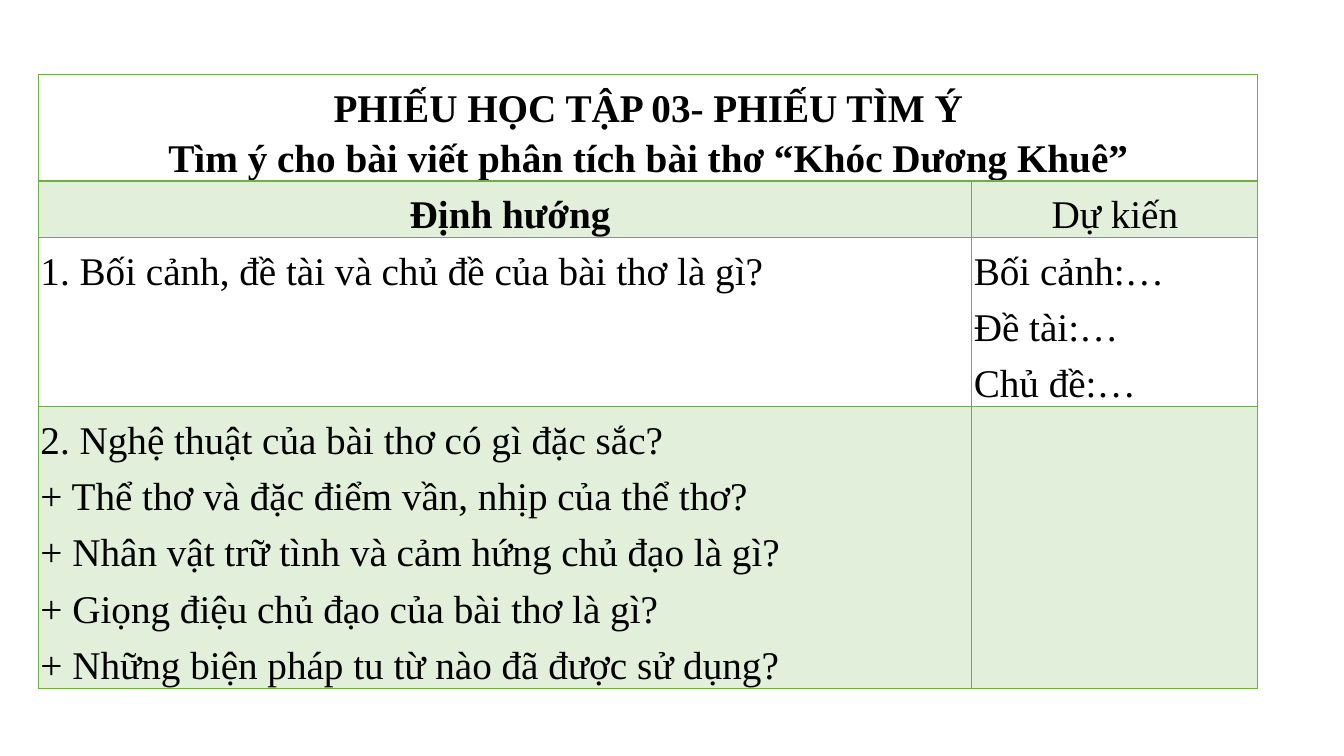
import pptx
import pptx.dml.color
import pptx.enum.text
import pptx.oxml
import pptx.oxml.ns
import pptx.util

Cm = pptx.util.Cm
Pt = pptx.util.Pt
ALIGN = pptx.enum.text.PP_ALIGN

TITLE = [
    "PHIẾU HỌC TẬP 03- PHIẾU TÌM Ý",
    "Tìm ý cho bài viết phân tích bài thơ “Khóc Dương Khuê”",
]
HEADINGS = [" Định hướng", "Dự kiến"]
CONTEXT_QUESTION = ["1. Bối cảnh, đề tài và chủ đề của bài thơ là gì?"]
CONTEXT_ANSWERS = ["Bối cảnh:…", "Đề tài:…", "Chủ đề:…"]
ART_QUESTIONS = [
    "2. Nghệ thuật của bài thơ có gì đặc sắc?",
    "+ Thể thơ và đặc điểm vần, nhịp của thể thơ?",
    "+ Nhân vật trữ tình và cảm hứng chủ đạo là gì?",
    "+ Giọng điệu chủ đạo của bài thơ là gì?",
    "+ Những biện pháp tu từ nào đã được sử dụng?",
]
ROWS = [
    [TITLE, []],
    [[heading] for heading in HEADINGS],
    [CONTEXT_QUESTION, CONTEXT_ANSWERS],
    [ART_QUESTIONS, []],
]
COLUMN_WIDTHS = [23.52, 7.21]
ROW_HEIGHTS = [2.67, 1.42, 4.25, 7.09]
LEFT, TOP = 0.97, 1.88
GREEN, PALE_GREEN, WHITE, BLACK = "70AD47", "E2EFDA", "FFFFFF", "000000"


def color(value):
    return pptx.dml.color.RGBColor.from_string(value)


def write(paragraph, text, bold=False, align=ALIGN.LEFT, spacing=1.3):
    paragraph.alignment = align
    paragraph.line_spacing = spacing
    run = paragraph.add_run()
    run.text = text
    run.font.name = "Times New Roman"
    run.font.size = Pt(28)
    run.font.bold = bold
    run.font.color.rgb = color(BLACK)


def set_borders(cell, widths):
    properties = cell._tc.get_or_add_tcPr()
    namespace = pptx.oxml.ns.nsdecls("a")
    for side, width in zip("LRTB", widths):
        properties.append(pptx.oxml.parse_xml(
            f'<a:ln{side} {namespace} w="{Pt(width)}"><a:solidFill>'
            f'<a:srgbClr val="{GREEN}"/></a:solidFill></a:ln{side}>'))


def fill_cell(cell, lines, row, column):
    cell.margin_left = cell.margin_right = Cm(0.05)
    cell.margin_top = cell.margin_bottom = 0
    set_borders(cell, (1, 1, 2 if row == 1 else 1, 2 if row == 0 else 1))
    cell.fill.solid()
    cell.fill.fore_color.rgb = color(PALE_GREEN if row % 2 else WHITE)
    frame = cell.text_frame
    for index, text in enumerate(lines):
        paragraph = frame.add_paragraph() if index else frame.paragraphs[0]
        write(paragraph, text,
              bold=row < 2 and column == 0,
              align=ALIGN.CENTER if row < 2 else ALIGN.LEFT,
              spacing=1.15 if row == 0 and index else 1.3)


def main():
    presentation = pptx.Presentation()
    presentation.slide_width = Cm(33.87)
    presentation.slide_height = Cm(19.05)
    slide = presentation.slides.add_slide(presentation.slide_layouts[6])
    table = slide.shapes.add_table(
        len(ROWS), len(COLUMN_WIDTHS), Cm(LEFT), Cm(TOP),
        Cm(sum(COLUMN_WIDTHS)), Cm(sum(ROW_HEIGHTS))).table
    table.first_row = False
    table.horz_banding = False
    for column, width in zip(table.columns, COLUMN_WIDTHS):
        column.width = Cm(width)
    for row, height in zip(table.rows, ROW_HEIGHTS):
        row.height = Cm(height)
    for row, cells in enumerate(ROWS):
        for column, lines in enumerate(cells):
            fill_cell(table.cell(row, column), lines, row, column)
    table.cell(0, 0).merge(table.cell(0, 1))
    presentation.save("out.pptx")


if __name__ == "__main__":
    main()
